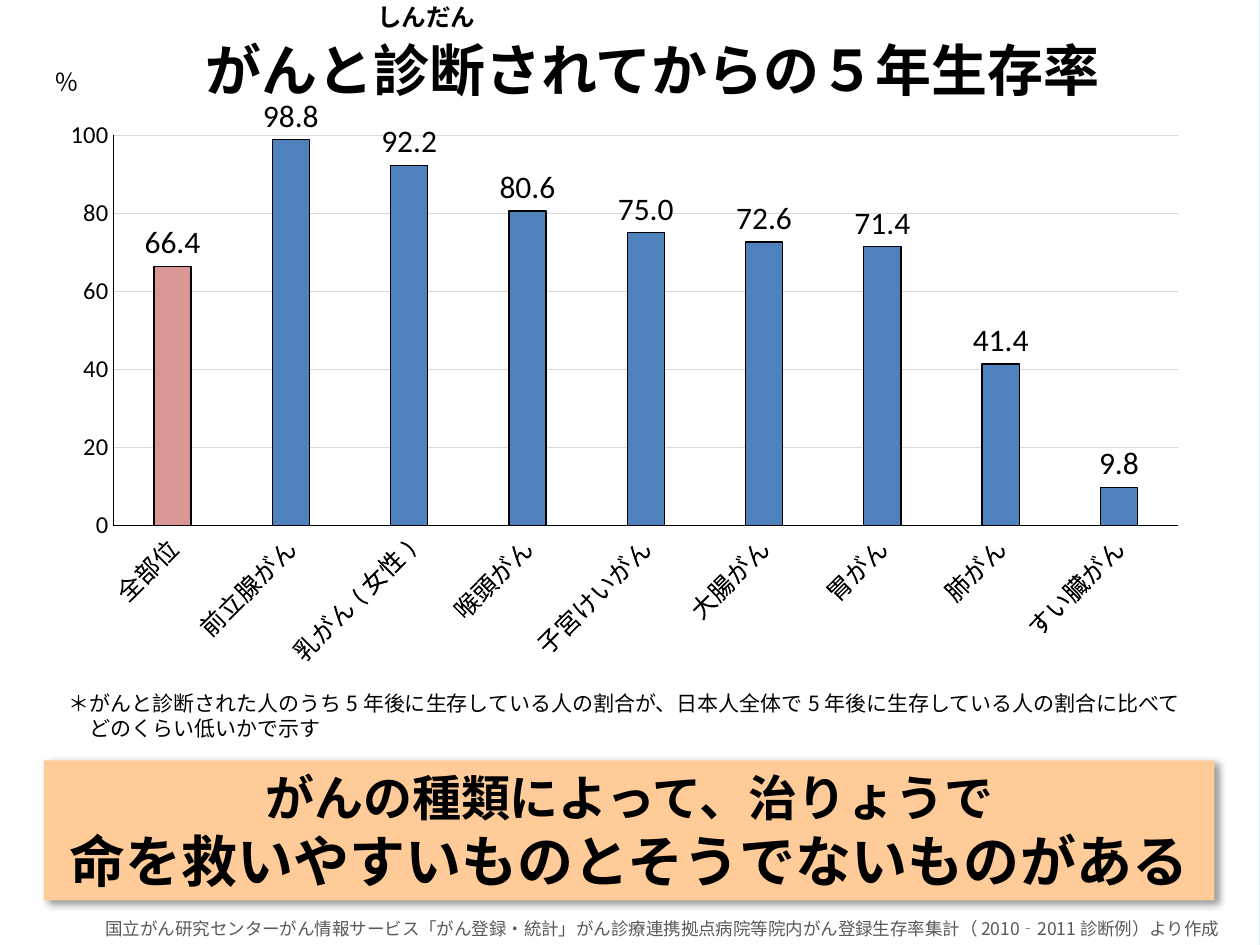
import dataclasses

import lxml.etree
import pptx
import pptx.chart.data
import pptx.dml.color
import pptx.enum.chart
import pptx.enum.shapes
import pptx.enum.text
import pptx.oxml
import pptx.oxml.ns
import pptx.util

Pt = pptx.util.Pt
qn = pptx.oxml.ns.qn
ALIGN = pptx.enum.text.PP_ALIGN
ANCHOR = pptx.enum.text.MSO_ANCHOR
RECT = pptx.enum.shapes.MSO_SHAPE.RECTANGLE


@dataclasses.dataclass(frozen=True)
class Theme:
    back: str = "E1F4FF"
    page: str = "FFFFFF"
    ink: str = "000000"
    gray: str = "595959"
    grid: str = "D9D9D9"
    bar: str = "4F81BD"
    accent: str = "D99694"
    banner: str = "FFCC99"
    latin: str = "Calibri"
    asian: str = "Noto Sans CJK JP"
    title: int = 32
    lead: int = 28
    value: int = 18
    label: int = 14
    note: int = 12
    source: int = 10


THEME = Theme()
RATES = {
    "全部位": 66.4, "前立腺がん": 98.8, "乳がん(女性)": 92.2,
    "喉頭がん": 80.6, "子宮けいがん": 75.0, "大腸がん": 72.6,
    "胃がん": 71.4, "肺がん": 41.4, "すい臓がん": 9.8,
}


def color(code):
    return pptx.dml.color.RGBColor.from_string(code)


def paint(part, fill, line=None, width=0.75):
    part.fill.solid()
    part.fill.fore_color.rgb = color(fill)
    if line:
        part.line.color.rgb = color(line)
        part.line.width = Pt(width)
    else:
        part.line.fill.background()


def place(shape, box):
    shape.left, shape.top, shape.width, shape.height = map(Pt, box)


def style(font, size, face=THEME.latin, ink=THEME.ink, bold=False):
    font.size, font.name, font.bold = Pt(size), face, bold
    font.color.rgb = color(ink)


def write(shape, *lines, face=THEME.asian, ink=THEME.ink, bold=False,
          align=ALIGN.CENTER, anchor=ANCHOR.TOP, wrap=True, lead=1.2):
    """Fill a shape with (text, size) lines."""
    frame = shape.text_frame
    frame.word_wrap = wrap
    frame.auto_size = pptx.enum.text.MSO_AUTO_SIZE.NONE
    frame.vertical_anchor = anchor
    for i, (text, size) in enumerate(lines):
        para = frame.add_paragraph() if i else frame.paragraphs[0]
        para.alignment = align
        para.line_spacing = Pt(round(size * lead, 1))
        para.space_before = para.space_after = Pt(0)
        run = para.add_run()
        run.text = text
        style(run.font, size, face, ink, bold)
        east = lxml.etree.Element(qn("a:ea"), typeface=THEME.asian)
        run.font._element.find(qn("a:latin")).addnext(east)


def label(slide, box, *lines, **form):
    write(slide.shapes.add_textbox(*map(Pt, box)), *lines, **form)


def page(slide, box):
    slide.background.fill.solid()
    slide.background.fill.fore_color.rgb = color(THEME.back)
    sheet = slide.shapes.add_shape(RECT, *map(Pt, box))
    sheet.shadow.inherit = False
    paint(sheet, THEME.page, THEME.page, 2)
    slide.shapes.element.insert(2, sheet._element)  # behind the title


def heading(slide, box):
    x, y, w, h = box
    title = slide.shapes.title
    place(title, box)
    write(title, ("がんと診断されてからの５年生存率", THEME.title), bold=True)
    label(slide, (x + 160, y - 24, 73, 34), ("しんだん", THEME.label),
          face=THEME.latin, bold=True, anchor=ANCHOR.MIDDLE)
    label(slide, (x - 26, y + 11, 34, 38), ("％", THEME.label),
          face=THEME.latin, anchor=ANCHOR.MIDDLE)


def fix(chart):
    """Pin the inner plot area as fractions of the chart."""
    area = chart._chartSpace.chart.plotArea
    for old in area.findall(qn("c:layout")):
        area.remove(old)
    parts = "".join(f'<c:{tag} val="{val}"/>' for tag, val in (
        ("layoutTarget", "inner"), ("xMode", "edge"), ("yMode", "edge"),
        ("x", 0.073), ("y", 0.057), ("w", 0.857), ("h", 0.661)))
    area.insert(0, pptx.oxml.parse_xml(
        f'<c:layout {pptx.oxml.ns.nsdecls("c")}>'
        f"<c:manualLayout>{parts}</c:manualLayout></c:layout>"))


def bars(slide, box):
    kinds = pptx.enum.chart
    data = pptx.chart.data.CategoryChartData(number_format="0.0")
    data.categories = list(RATES)
    data.add_series("5年生存率", list(RATES.values()))
    chart = slide.shapes.add_chart(
        kinds.XL_CHART_TYPE.COLUMN_CLUSTERED, *map(Pt, box), data).chart
    chart.has_legend = chart.has_title = False
    style(chart.font, THEME.source)
    for axis in (chart.category_axis, chart.value_axis):
        axis.major_tick_mark = kinds.XL_TICK_MARK.NONE
        axis.minor_tick_mark = kinds.XL_TICK_MARK.NONE
        axis.format.line.color.rgb = color(THEME.ink)
        axis.format.line.width = Pt(0.75)
        style(axis.tick_labels.font, THEME.label)
    scale = chart.value_axis
    scale.minimum_scale, scale.maximum_scale, scale.major_unit = 0, 100, 20
    scale.tick_labels.number_format = "0"
    scale.tick_labels.number_format_is_linked = False
    grid = scale.major_gridlines.format.line
    grid.color.rgb, grid.width = color(THEME.grid), Pt(0.75)
    plot = chart.plots[0]
    plot.gap_width, plot.overlap = 219, -27
    plot.vary_by_categories = False
    rates = plot.series[0]
    paint(rates.format, THEME.bar, THEME.ink)
    paint(rates.points[0].format, THEME.accent, THEME.ink)
    tags = rates.data_labels
    tags.show_value = True
    tags.number_format, tags.number_format_is_linked = "0.0", False
    tags.position = kinds.XL_LABEL_POSITION.OUTSIDE_END
    style(tags.font, THEME.value)
    fix(chart)


def banner(slide, box):
    shape = slide.shapes.add_shape(RECT, *map(Pt, box))
    shape.shadow.inherit = False
    paint(shape, THEME.banner)
    glow = shape._element.spPr.find(qn("a:effectLst"))
    glow.append(pptx.oxml.parse_xml(
        f'<a:outerShdw {pptx.oxml.ns.nsdecls("a")} blurRad="{Pt(4)}" '
        f'dist="{Pt(3)}" dir="2700000" algn="tl" rotWithShape="0">'
        f'<a:srgbClr val="{THEME.ink}"><a:alpha val="40000"/></a:srgbClr>'
        "</a:outerShdw>"))
    write(shape, ("がんの種類によって、治りょうで", THEME.lead),
          ("命を救いやすいものとそうでないものがある", THEME.title),
          bold=True, anchor=ANCHOR.MIDDLE)


def notes(slide, box):
    x, y, w, h = box
    label(slide, (x, y, w, 36),
          ("＊がんと診断された人のうち5年後に生存している人の割合が、"
           "日本人全体で5年後に生存している人の割合に比べて", THEME.note),
          ("　どのくらい低いかで示す", THEME.note), align=ALIGN.LEFT)
    label(slide, (x + 9, y + 130, w + 23, 20),
          ("国立がん研究センターがん情報サービス「がん登録・統計」"
           "がん診療連携拠点病院等院内がん登録生存率集計"
           "（2010‐2011診断例）より作成", THEME.source), ink=THEME.gray)


def main():
    deck = pptx.Presentation()
    deck.slide_width, deck.slide_height = Pt(720), Pt(540)
    slide = deck.slides.add_slide(deck.slide_layouts[5])
    page(slide, (-3, 0, 721.5, 540))
    banner(slide, (25, 434.5, 669, 80))
    heading(slide, (47, 16.5, 652, 46))
    bars(slide, (13, 55.5, 710, 340))
    notes(slide, (32, 391, 652, 150))
    deck.save("out.pptx")


if __name__ == "__main__":
    main()
